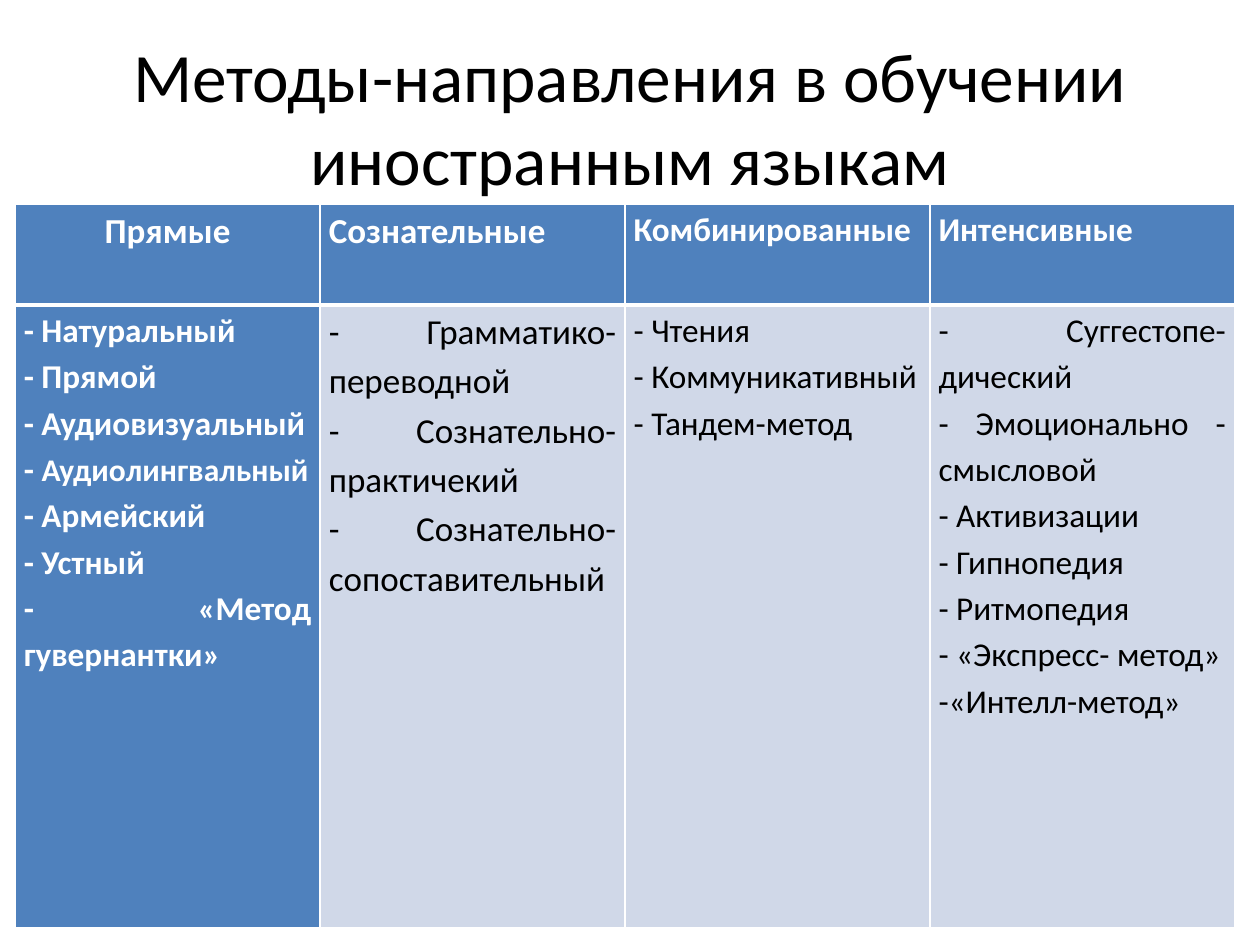
import lxml.etree
import pptx
import pptx.dml.color
import pptx.enum.text
import pptx.oxml.ns
import pptx.util

Inches, Pt = pptx.util.Inches, pptx.util.Pt
RGB = pptx.dml.color.RGBColor.from_string
ALIGN = pptx.enum.text.PP_ALIGN
ANCHOR = pptx.enum.text.MSO_ANCHOR
qn = pptx.oxml.ns.qn

COLORS = {"accent": "4F81BD", "pale": "D0D8E8", "light": "FFFFFF", "dark": "000000"}

# heading, heading size, methods, methods size
GROUPS = [
    ("Прямые", 20,
     ["- Натуральный", "- Прямой", "- Аудиовизуальный", "- Аудиолингвальный",
      "- Армейский", "- Устный", "- «Метод гувернантки»"], 19),
    ("Сознательные", 20,
     ["- Грамматико-переводной", "- Сознательно-практичекий",
      "- Сознательно-сопоставительный"], 20),
    ("Комбинированные", 19,
     ["- Чтения", "- Коммуникативный", "- Тандем-метод"], 19),
    ("Интенсивные", 19,
     ["- Суггестопе-дический", "- Эмоционально - смысловой", "- Активизации",
      "- Гипнопедия", "- Ритмопедия", "- «Экспресс- метод»", "-«Интелл-метод»"], 19),
]
SMALLER = {"Аудиолингвальный": 18}


def format_run(run, size, color, bold=False):
    run.font.name = "Calibri"
    run.font.size = Pt(size)
    run.font.bold = bold
    run.font.color.rgb = RGB(COLORS[color])


def fill_cell(cell, lines, size, fill, color, bold, widths):
    """Write the lines and style the cell; widths maps border tags to points."""
    cell.margin_left = cell.margin_right = Inches(0.07)
    cell.margin_top = cell.margin_bottom = 0
    properties = cell._tc.get_or_add_tcPr()
    for tag, width in widths.items():
        border = lxml.etree.SubElement(properties, qn("a:" + tag), w=str(Pt(width)))
        solid = lxml.etree.SubElement(border, qn("a:solidFill"))
        lxml.etree.SubElement(solid, qn("a:srgbClr"), val=COLORS["light"])
    cell.fill.solid()
    cell.fill.fore_color.rgb = RGB(COLORS[fill])

    cell.text_frame.text = "\n".join(lines)
    for paragraph in cell.text_frame.paragraphs:
        paragraph.alignment = ALIGN.JUSTIFY
        paragraph.line_spacing = 1.15
        method = paragraph.text.removeprefix("- ")
        if method in SMALLER:
            paragraph.runs[0].text = "- "
            paragraph.add_run().text = method
        for run in paragraph.runs:
            format_run(run, SMALLER.get(run.text, size), color, bold)


deck = pptx.Presentation()
deck.slide_width, deck.slide_height = Inches(10), Inches(7.5)
slide = deck.slides.add_slide(deck.slide_layouts[6])

title = slide.shapes.add_textbox(Inches(0.5), Inches(0.3), Inches(9), Inches(1.25)).text_frame
title.word_wrap = True
title.vertical_anchor = ANCHOR.MIDDLE
title.text = "Методы-направления в обучении иностранным языкам"
title.paragraphs[0].alignment = ALIGN.CENTER
format_run(title.paragraphs[0].runs[0], 39.6, "dark")

methods_table = slide.shapes.add_table(
    2, len(GROUPS), Inches(0.12), Inches(1.62), Inches(9.68), Inches(5.74)).table
methods_table.rows[0].height = Inches(0.8)
methods_table.rows[1].height = Inches(4.94)

heading_borders = {"lnL": 1, "lnR": 1, "lnT": 1, "lnB": 3}
body_borders = {"lnL": 1, "lnR": 1, "lnT": 3, "lnB": 1}
for column, (heading, heading_size, methods, size) in enumerate(GROUPS):
    methods_table.columns[column].width = Inches(2.42)
    fill_cell(methods_table.cell(0, column), [heading], heading_size,
              "accent", "light", True, heading_borders)
    is_first = column == 0
    fill_cell(methods_table.cell(1, column), methods, size,
              "accent" if is_first else "pale", "light" if is_first else "dark",
              is_first, body_borders)
methods_table.cell(0, 0).text_frame.paragraphs[0].alignment = ALIGN.CENTER

deck.save("out.pptx")
